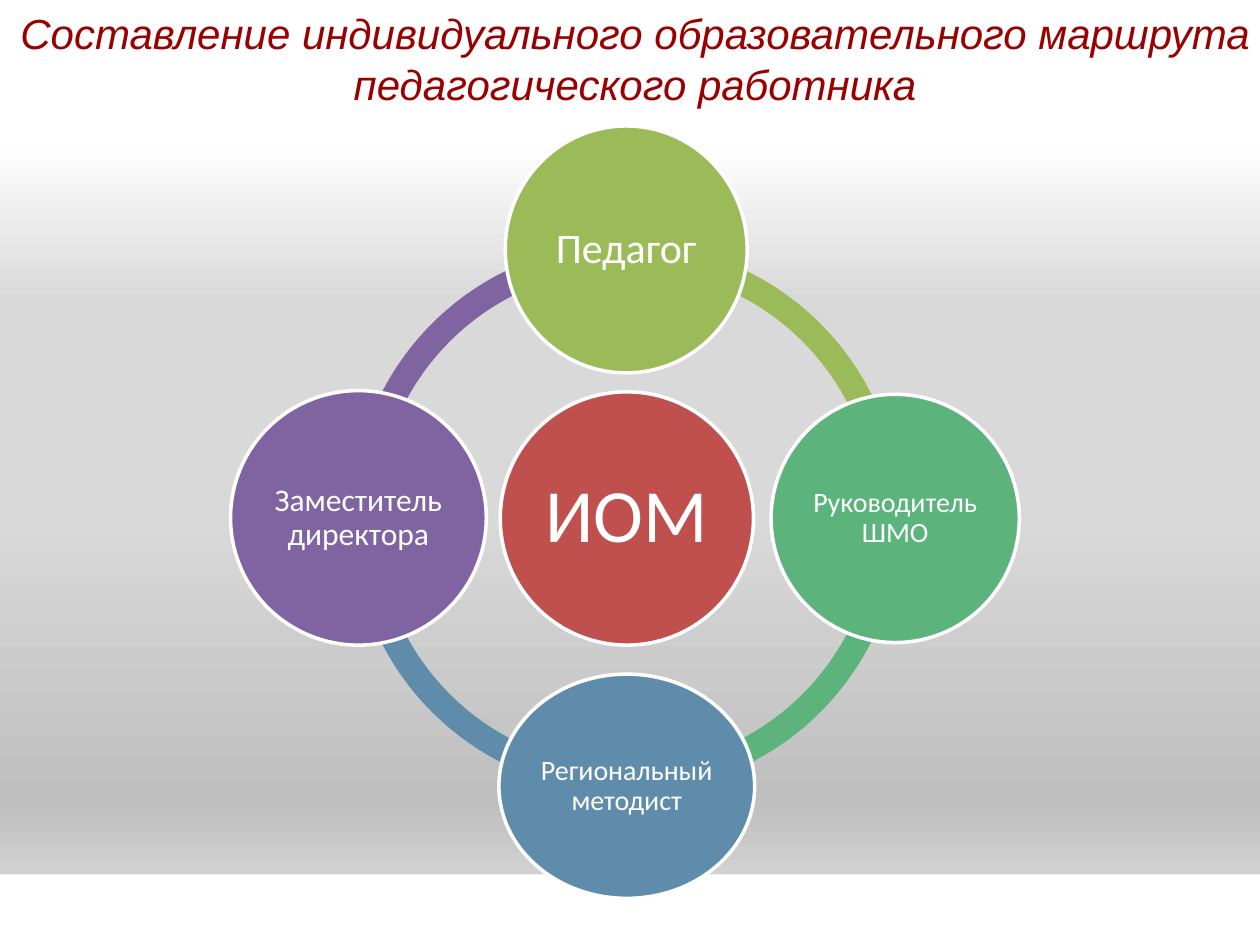
from lxml import etree
from pptx import Presentation
from pptx.dml.color import RGBColor
from pptx.enum.shapes import MSO_SHAPE
from pptx.enum.text import MSO_ANCHOR, PP_ALIGN
from pptx.oxml.ns import qn
from pptx.util import Inches, Pt

RECTANGLE = MSO_SHAPE.RECTANGLE
OVAL = MSO_SHAPE.OVAL
BLOCK_ARC = MSO_SHAPE.BLOCK_ARC
MIDDLE = MSO_ANCHOR.MIDDLE
CENTER = PP_ALIGN.CENTER

COLORS = {
    "white": "FFFFFF",
    "title": "990000",
    "red": "C0504D",
    "olive": "9BBB59",
    "green": "5CB37C",
    "blue": "608CAB",
    "purple": "8064A2",
}
BACKDROP = [(0, "FFFFFF"), (15, "FFFFFF"), (32, "D9D9D9"),
            (54, "D9D9D9"), (85, "BFBFBF"), (100, "E6E6E6")]


def add_filled(kind, left, top, width, height, color):
    shape = slide.shapes.add_shape(
        kind, Inches(left), Inches(top), Inches(width), Inches(height))
    shape.shadow.inherit = False
    shape.fill.solid()
    shape.fill.fore_color.rgb = RGBColor.from_string(COLORS[color])
    shape.line.fill.background()
    return shape


def write(shape, text, size, font, color, inset_x, inset_y):
    frame = shape.text_frame
    frame.word_wrap = True
    frame.vertical_anchor = MIDDLE
    frame.margin_left = frame.margin_right = Inches(inset_x)
    frame.margin_top = frame.margin_bottom = Inches(inset_y)
    paragraph = frame.paragraphs[0]
    paragraph.text = text
    paragraph.alignment = CENTER
    paragraph.font.size = Pt(size)
    paragraph.font.name = font
    paragraph.font.color.rgb = RGBColor.from_string(COLORS[color])
    return paragraph


prs = Presentation()
prs.slide_width = Inches(10)
prs.slide_height = Inches(7.5)
slide = prs.slides.add_slide(prs.slide_layouts[6])

backdrop = slide.background.fill
backdrop.gradient()
backdrop.gradient_angle = 270
stops = slide._element.find(".//" + qn("a:gsLst"))
for stop in list(stops):
    stops.remove(stop)
for percent, shade in BACKDROP:
    stop = etree.SubElement(stops, qn("a:gs"), pos=str(percent * 1000))
    etree.SubElement(stop, qn("a:srgbClr"), val=shade)

add_filled(RECTANGLE, 0, 6.94, 10.01, 0.58, "white")
heading = add_filled(RECTANGLE, 0.04, 0, 10, 0.92, "white")
heading_line = write(
    heading, "Составление индивидуального образовательного маршрута педагогического работника",
    24, "Arial", "title", 0.1, 0.05)
heading_line.font.italic = True

for start, end, color in [(108, 162, "purple"), (54, 108, "blue"),
                          (0, 54, "green"), (162, 0, "olive")]:
    arc = add_filled(BLOCK_ARC, 2.79, 1.93, 4.36, 4.36, color)
    arc.adjustments[0] = start
    arc.adjustments[1] = end
    arc.adjustments[2] = 0.046

ROLES = [
    ("ИОМ", 43, "red", 3.97, 3.11, 2.01, 2.01, 0.06),
    ("Педагог", 24, "olive", 4.01, 1, 1.92, 1.96, 0.03),
    ("Руководитель ШМО", 16, "green", 6.12, 3.13, 1.97, 1.97, 0.02),
    ("Региональный методист", 16, "blue", 3.96, 5.35, 2.03, 1.78, 0.02),
    ("Заместитель директора", 18, "purple", 1.83, 3.1, 2.03, 2.02, 0.03),
]
for role, size, color, left, top, width, height, inset in ROLES:
    circle = add_filled(OVAL, left, top, width, height, color)
    circle.line.color.rgb = RGBColor.from_string(COLORS["white"])
    circle.line.width = Pt(2)
    label = write(circle, role, size, "Calibri", "white", inset, inset)
    label.line_spacing = 0.9

prs.save("out.pptx")
